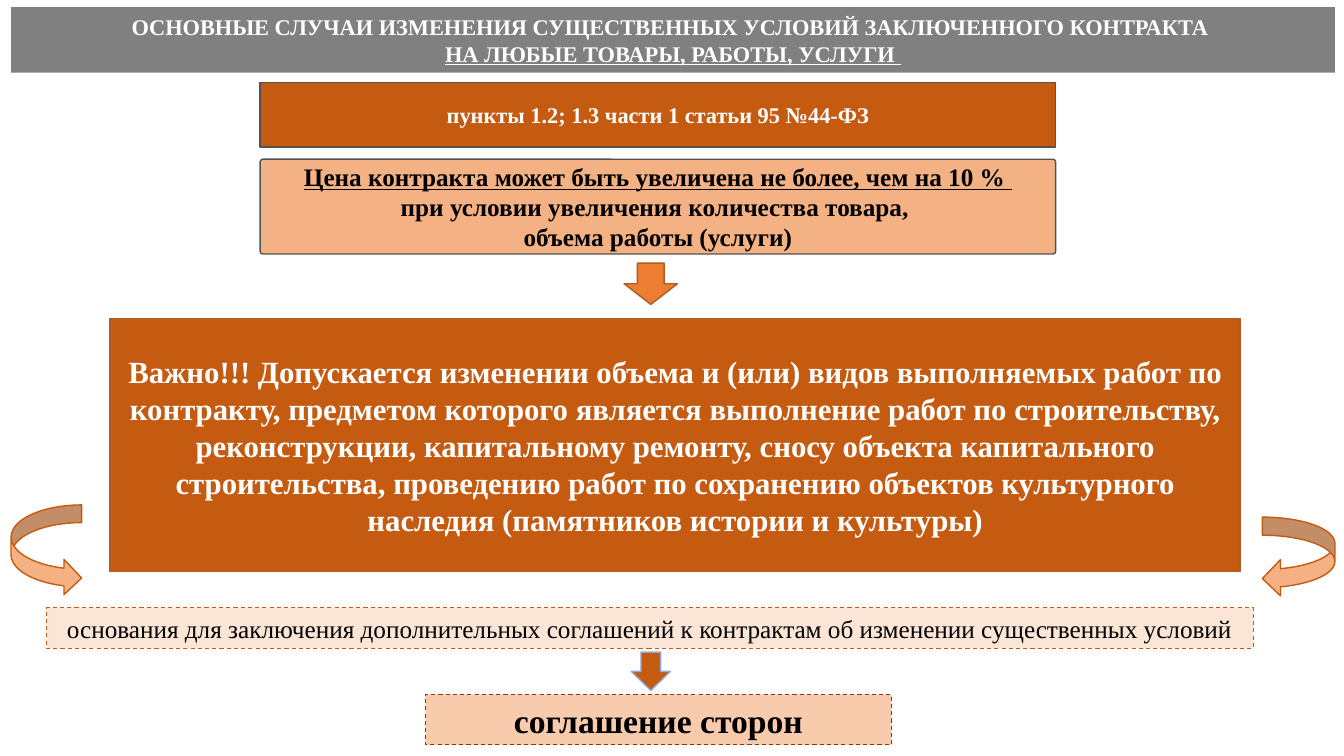
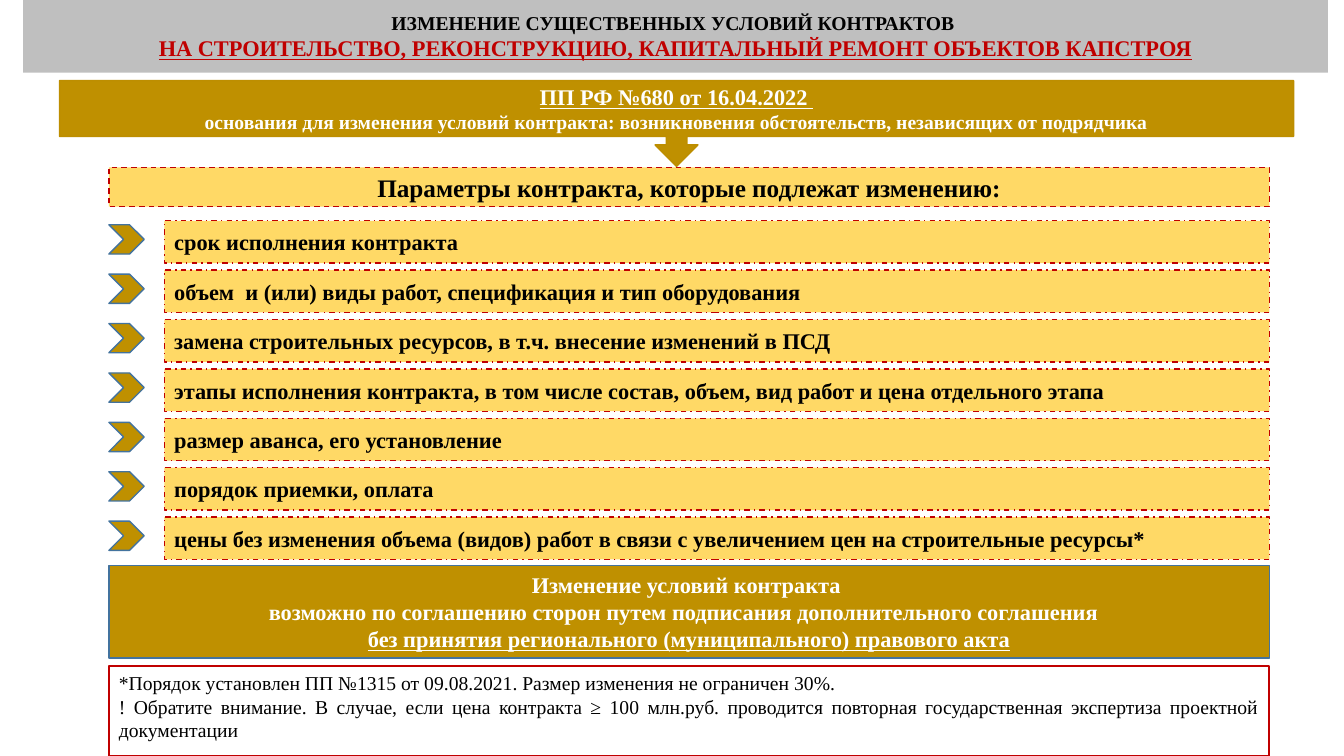
import pptx
import pptx.util
import pptx.dml.color
import pptx.enum.dml
import pptx.enum.shapes
import pptx.enum.text

Inches = pptx.util.Inches
RGBColor = pptx.dml.color.RGBColor
Shape = pptx.enum.shapes.MSO_SHAPE
Dash = pptx.enum.dml.MSO_LINE
Anchor = pptx.enum.text.MSO_ANCHOR
Align = pptx.enum.text.PP_ALIGN

# Shared style
FONT = "Times New Roman"
WHITE = RGBColor(0xFF, 0xFF, 0xFF)
BLACK = RGBColor(0x00, 0x00, 0x00)
RED = RGBColor(0xC0, 0x00, 0x00)
GRAY = RGBColor(0x80, 0x80, 0x80)
LIGHT_GRAY = RGBColor(0xBF, 0xBF, 0xBF)
DARK_GRAY = RGBColor(0x52, 0x52, 0x52)
RUST = RGBColor(0xC5, 0x5A, 0x11)
BROWN = RGBColor(0xAF, 0x5C, 0x24)
DARK_BROWN = RGBColor(0x84, 0x3C, 0x0B)
ORANGE = RGBColor(0xED, 0x7D, 0x31)
PEACH = RGBColor(0xF4, 0xB1, 0x83)
LIGHT_PEACH = RGBColor(0xF8, 0xCB, 0xAD)
PALE_PEACH = RGBColor(0xFB, 0xE5, 0xD6)
GOLD = RGBColor(0xBF, 0x90, 0x00)
DARK_GOLD = RGBColor(0xBD, 0x8E, 0x00)
YELLOW = RGBColor(0xFF, 0xD9, 0x66)
BLUE = RGBColor(0x43, 0x73, 0x9E)
LIGHT_BLUE = RGBColor(0x8F, 0xAA, 0xDC)

PARAMETERS = [
    "срок исполнения контракта",
    "объем  и (или) виды работ, спецификация и тип оборудования",
    "замена строительных ресурсов, в т.ч. внесение изменений в ПСД",
    "этапы исполнения контракта, в том числе состав, объем, вид работ и цена отдельного этапа",
    "размер аванса, его установление",
    "порядок приемки, оплата",
    "цены без изменения объема (видов) работ в связи с увеличением цен на строительные ресурсы*",
]


def write_text(shape, lines, size=16, color=BLACK, bold=True,
               align=Align.CENTER, anchor=Anchor.MIDDLE):
    """Write one paragraph per line; a line is a string or (string, overrides)."""
    frame = shape.text_frame
    frame.word_wrap = True
    frame.auto_size = pptx.enum.text.MSO_AUTO_SIZE.NONE
    frame.vertical_anchor = anchor
    for index, line in enumerate(lines):
        text, overrides = (line, {}) if isinstance(line, str) else line
        paragraph = frame.add_paragraph() if index else frame.paragraphs[0]
        paragraph.alignment = align
        run = paragraph.add_run()
        run.text = text
        font = run.font
        font.name = FONT
        font.bold = bold
        font.size = pptx.util.Pt(overrides.get("size", size))
        font.color.rgb = overrides.get("color", color)
        font.underline = overrides.get("underline", False)


def add_box(slide, box, fill=None, line=None, width=1, dash=None,
            kind=Shape.RECTANGLE, adjustments=(), lines=(), **text_format):
    """Add a preset shape in box (left, top, width, height) with its text."""
    shape = slide.shapes.add_shape(kind, *map(Inches, box))
    shape.shadow.inherit = False
    for index, value in enumerate(adjustments):
        shape.adjustments[index] = value
    if fill is None:
        shape.fill.background()
    else:
        shape.fill.solid()
        shape.fill.fore_color.rgb = fill
    if line is None:
        shape.line.fill.background()
    else:
        shape.line.color.rgb = line
        shape.line.width = pptx.util.Pt(width)
        if dash is not None:
            shape.line.dash_style = dash
    if lines:
        write_text(shape, lines, **text_format)
    return shape


def add_titled_slide(presentation, box, fill, lines, **text_format):
    """Add a title-only slide whose title is a filled band."""
    slide = presentation.slides.add_slide(presentation.slide_layouts[5])
    title = slide.shapes.title
    title.left, title.top, title.width, title.height = map(Inches, box)
    title.fill.solid()
    title.fill.fore_color.rgb = fill
    write_text(title, lines, **text_format)
    return slide


def add_price_rule(slide, left, top, width):
    """Legal reference above the price limit."""
    add_box(slide, (left, top, width, 0.64), RUST, DARK_GRAY, color=WHITE,
            lines=["пункты 1.2; 1.3 части 1 статьи 95 №44-ФЗ"])
    add_box(slide, (left, top + 0.76, width, 0.94), PEACH, DARK_GRAY,
            kind=Shape.ROUNDED_RECTANGLE, adjustments=[0.03], size=18,
            lines=[("Цена контракта может быть увеличена не более, чем на 10 % ",
                    {"underline": True}),
                   "при условии увеличения количества товара, ",
                   "объема работы (услуги)"])


def add_parameter_rows(slide, left, top, width, pitch=0.49):
    """Evenly spaced rows, each with a chevron to its left."""
    indent = 0.55
    for index, parameter in enumerate(PARAMETERS):
        row_top = top + index * pitch
        add_box(slide, (left, row_top + 0.04, 0.35, 0.29), GOLD, BLUE,
                kind=Shape.CHEVRON)
        add_box(slide, (left + indent, row_top, width - indent, 0.42), YELLOW,
                RED, dash=Dash.DASH_DOT, lines=[parameter], align=Align.LEFT)


def build_general_cases(presentation):
    slide = add_titled_slide(
        presentation, (0.11, 0.07, 13.13, 0.65), GRAY, color=WHITE,
        lines=["ОСНОВНЫЕ СЛУЧАИ ИЗМЕНЕНИЯ СУЩЕСТВЕННЫХ УСЛОВИЙ ЗАКЛЮЧЕННОГО КОНТРАКТА ",
               ("НА ЛЮБЫЕ ТОВАРЫ, РАБОТЫ, УСЛУГИ ", {"underline": True})])
    add_price_rule(slide, 2.58, 0.82, 7.89)
    add_box(slide, (6.19, 2.61, 0.53, 0.41), ORANGE, BROWN, kind=Shape.DOWN_ARROW)

    # Key message
    add_box(slide, (1.09, 3.16, 11.21, 2.51), RUST, BROWN, size=22, color=WHITE,
            lines=["Важно!!! Допускается изменении объема и (или) видов выполняемых "
                   "работ по контракту, предметом которого является выполнение работ "
                   "по строительству, реконструкции, капитальному ремонту, сносу "
                   "объекта капитального строительства, проведению работ по "
                   "сохранению объектов культурного наследия (памятников истории "
                   "и культуры)"])

    # Side arrows to the grounds
    add_box(slide, (0.11, 5.01, 0.7, 0.9), PEACH, RUST,
            kind=Shape.CURVED_RIGHT_ARROW)
    add_box(slide, (12.52, 5.13, 0.72, 0.79), PEACH, RUST,
            kind=Shape.CURVED_LEFT_ARROW)

    # Grounds and result
    add_box(slide, (0.46, 6.03, 11.97, 0.4), PALE_PEACH, RUST, width=0.75,
            dash=Dash.DASH, size=18, bold=False,
            lines=["основания для заключения дополнительных соглашений к контрактам "
                   "об изменении существенных условий"])
    add_box(slide, (6.26, 6.47, 0.39, 0.38), RUST, LIGHT_BLUE, kind=Shape.DOWN_ARROW)
    add_box(slide, (4.22, 6.89, 4.62, 0.5), LIGHT_PEACH, DARK_BROWN, width=0.75,
            dash=Dash.DASH, size=24, lines=["соглашение сторон"])


def build_construction_cases(presentation):
    slide = add_titled_slide(
        presentation, (0.23, 0, 12.94, 0.72), LIGHT_GRAY,
        lines=[("ИЗМЕНЕНИЕ СУЩЕСТВЕННЫХ УСЛОВИЙ КОНТРАКТОВ ", {"size": 14}),
               ("НА СТРОИТЕЛЬСТВО, РЕКОНСТРУКЦИЮ, КАПИТАЛЬНЫЙ РЕМОНТ ОБЪЕКТОВ КАПСТРОЯ",
                {"color": RED, "underline": True})])
    left, width = 1.08, 11.51

    # Parameters open to change
    add_box(slide, (left, 1.66, width, 0.39), YELLOW, RED, dash=Dash.DASH, size=18,
            lines=["Параметры контракта, которые подлежат изменению:"])
    add_box(slide, (0.59, 0.8, 12.24, 0.85), GOLD, DARK_GOLD,
            kind=Shape.DOWN_ARROW_CALLOUT, adjustments=[0.24, 0.25, 0.25, 0.65],
            color=WHITE,
            lines=[("ПП РФ №680 от 16.04.2022 ", {"underline": True}),
                   ("основания для изменения условий контракта: возникновения "
                    "обстоятельств, независящих от подрядчика", {"size": 14})])
    add_parameter_rows(slide, left, 2.19, width)

    # Conclusion and footnote
    add_box(slide, (left, 5.61, width, 0.92), GOLD, BLUE, color=WHITE,
            lines=["Изменение условий контракта ",
                   "возможно по соглашению сторон путем подписания "
                   "дополнительного соглашения  ",
                   ("без принятия регионального (муниципального) правового акта",
                    {"underline": True})])
    add_box(slide, (left, 6.61, width, 0.89), line=RED, width=1.5, size=14,
            bold=False, align=Align.JUSTIFY, anchor=Anchor.TOP,
            lines=["*Порядок установлен ПП №1315 от 09.08.2021. "
                   "Размер изменения не ограничен 30%. ",
                   "! Обратите внимание. В случае, если цена контракта ≥ 100 млн.руб. "
                   "проводится повторная государственная экспертиза проектной "
                   "документации"])


def main():
    presentation = pptx.Presentation()
    presentation.slide_width = Inches(13.33)
    presentation.slide_height = Inches(7.5)
    build_general_cases(presentation)
    build_construction_cases(presentation)
    presentation.save("out.pptx")


if __name__ == "__main__":
    main()
